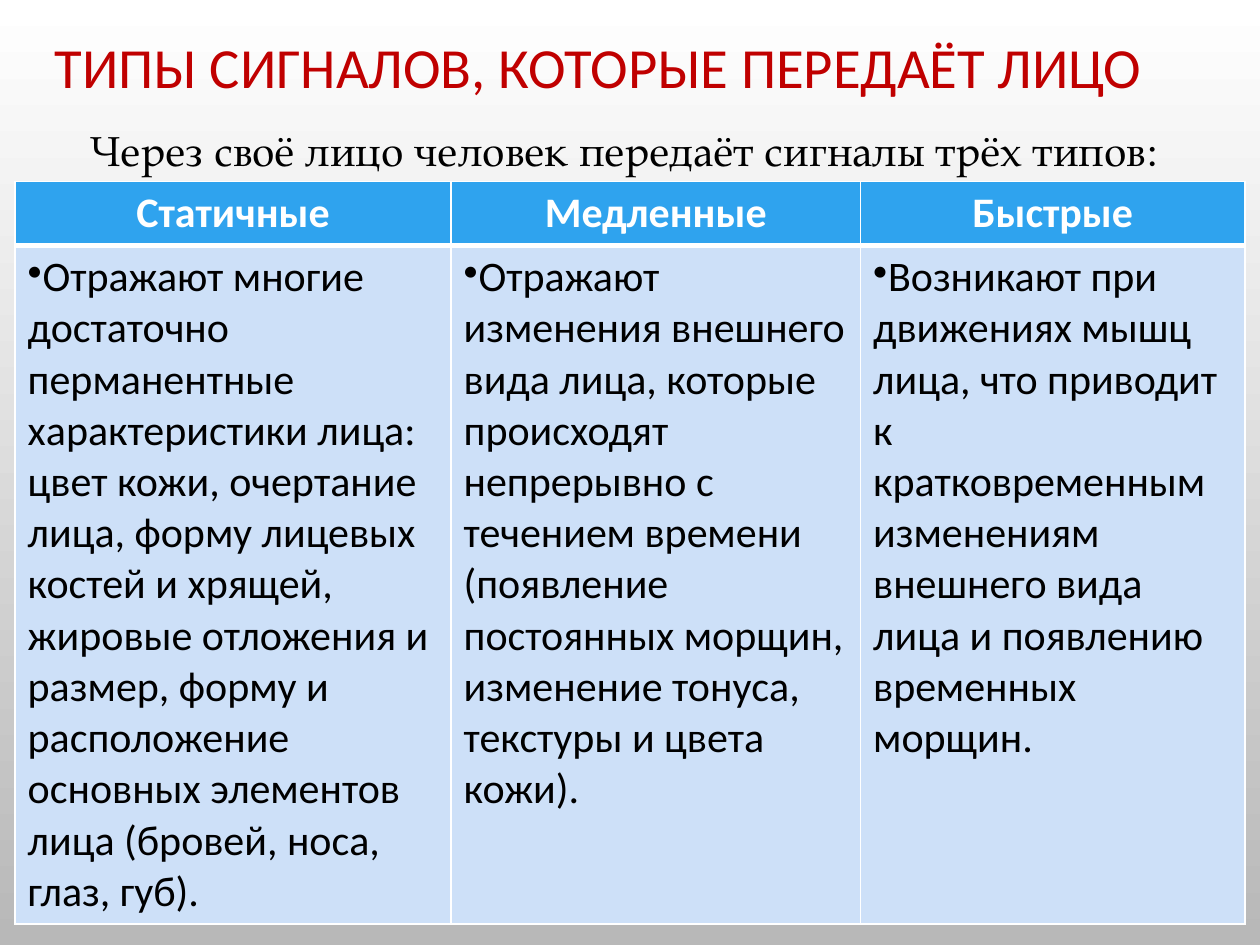
from lxml import etree
from pptx import Presentation
from pptx.dml.color import RGBColor
from pptx.enum import text
from pptx.oxml.ns import qn
from pptx.util import Inches, Pt

# Content
TITLE = "ТИПЫ СИГНАЛОВ, КОТОРЫЕ ПЕРЕДАЁТ ЛИЦО"
INTRO = "Через своё лицо человек передаёт сигналы трёх типов:"
SIGNALS = [  # heading, description, column width
    ("Статичные",
     "Отражают многие достаточно перманентные характеристики лица: цвет кожи, "
     "очертание лица, форму лицевых костей и хрящей, жировые отложения и размер, "
     "форму и расположение основных элементов лица (бровей, носа, глаз, губ).", 3.46),
    ("Медленные",
     "Отражают изменения внешнего вида лица, которые происходят непрерывно с течением "
     "времени (появление постоянных морщин, изменение тонуса, текстуры и цвета кожи).", 3.25),
    ("Быстрые",
     "Возникают при движениях мышц лица, что приводит к кратковременным изменениям "
     "внешнего вида лица и появлению временных морщин.", 3.05),
]
ROW_HEIGHTS = (0.5, 5.34)

THEME = {
    "title": "C00000", "text": "000000", "white": "FFFFFF", "bg_end": "B8B8B8",
    "head": "2FA3EE", "body": "CDE0F8",
    "sans": "Calibri", "serif": "TeX Gyre Pagella",
    "title_size": 32.4, "text_size": 24,
}


def rgb(name):
    return RGBColor.from_string(THEME[name])


def write(tf, content, font="sans", size="text_size", color="text", bold=False,
          align=None, spacing=None, bullet=None):
    p = tf.paragraphs[0]
    p.text = content
    if bullet:
        pPr = p._p.get_or_add_pPr()
        pPr.set("marL", "0")
        pPr.set("indent", "0")
        etree.SubElement(pPr, qn("a:buChar")).set("char", bullet)
    if align is not None:
        p.alignment = align
    if spacing:
        p.line_spacing = spacing
    f = p.runs[0].font
    f.name, f.size, f.bold = THEME[font], Pt(THEME[size]), bold
    f.color.rgb = rgb(color)


def style_cell(cell, fill, top=1, bottom=1):
    tcPr = cell._tc.get_or_add_tcPr()
    for side, width in (("L", 1), ("R", 1), ("T", top), ("B", bottom)):
        ln = etree.SubElement(tcPr, qn(f"a:ln{side}"), w=str(Pt(width)))
        solid = etree.SubElement(ln, qn("a:solidFill"))
        etree.SubElement(solid, qn("a:srgbClr"), val=THEME["white"])
    cell.fill.solid()
    cell.fill.fore_color.rgb = rgb(fill)


prs = Presentation()
prs.slide_width, prs.slide_height = Inches(10), Inches(7.5)
s = prs.slides.add_slide(prs.slide_layouts[5])

# Background, white at the top
bg = s.background.fill
bg.gradient()
bg.gradient_angle = 270
for stop, name, position in zip(bg.gradient_stops, ("white", "bg_end"), (0, 1)):
    stop.color.rgb = rgb(name)
    stop.position = position

# Title
sp = s.shapes.title
sp.left, sp.top, sp.width, sp.height = map(Inches, (0, 0.17, 9.5, 0.77))
sp.text_frame.vertical_anchor = text.MSO_ANCHOR.MIDDLE
write(sp.text_frame, TITLE, size="title_size", color="title",
      align=text.PP_ALIGN.CENTER, spacing=0.9)

# Table of signal types
width = sum(w for _, _, w in SIGNALS)
table = s.shapes.add_table(2, len(SIGNALS), Inches(0.12), Inches(1.44),
                           Inches(width), Inches(sum(ROW_HEIGHTS))).table
for row, height in zip(table.rows, ROW_HEIGHTS):
    row.height = Inches(height)
for col, (heading, description, col_width) in enumerate(SIGNALS):
    table.columns[col].width = Inches(col_width)
    head, body = table.cell(0, col), table.cell(1, col)
    style_cell(head, "head", bottom=3)
    style_cell(body, "body", top=3)
    write(head.text_frame, heading, color="white", bold=True, align=text.PP_ALIGN.CENTER)
    write(body.text_frame, description, bullet="•")

# Introductory line
tf = s.shapes.add_textbox(*map(Inches, (0.62, 0.94, 8.75, 0.51))).text_frame
tf.word_wrap = False
write(tf, INTRO, font="serif")

prs.save("out.pptx")
